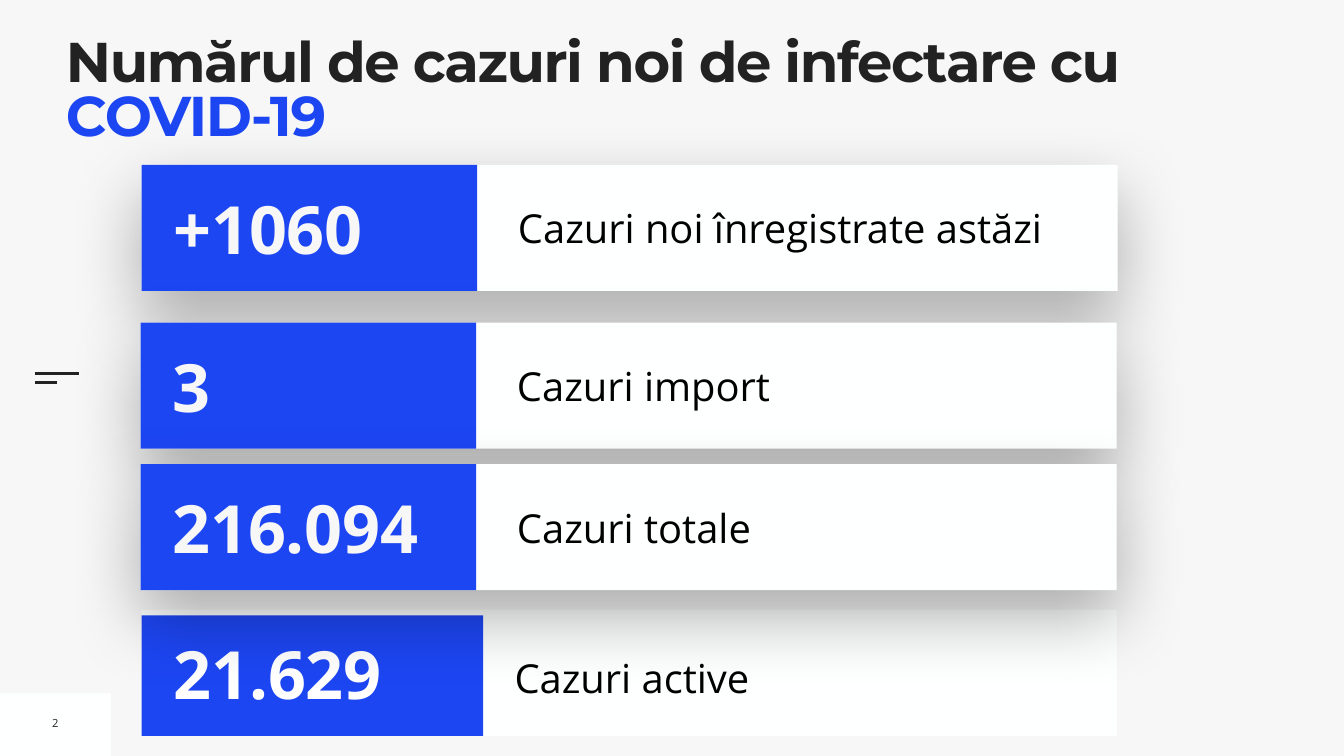
import pptx
import pptx.dml.color
import pptx.enum.shapes
import pptx.enum.text
import pptx.oxml
import pptx.oxml.ns
import pptx.util
from dataclasses import dataclass
from lxml import etree

Inches = pptx.util.Inches
Anchor = pptx.enum.text.MSO_ANCHOR
Align = pptx.enum.text.PP_ALIGN


@dataclass(frozen=True)
class Theme:
    background: str = "F7F7F7"
    panel: str = "FEFFFF"
    accent: str = "1D46F3"
    dark: str = "222222"
    black: str = "000000"
    white: str = "FFFFFF"
    heading_font: str = "Montserrat"
    body_font: str = "Open Sans"
    title_size: int = 80
    number_size: int = 95
    label_size: int = 57
    page_size: int = 16


theme = Theme()
rgb = pptx.dml.color.RGBColor.from_string


def add_rectangle(shapes, left, top, width, height, color):
    shape = shapes.add_shape(
        pptx.enum.shapes.MSO_SHAPE.RECTANGLE,
        Inches(left), Inches(top), Inches(width), Inches(height))
    shape.shadow.inherit = False
    shape.fill.solid()
    shape.fill.fore_color.rgb = rgb(color)
    shape.line.fill.background()
    return shape


def add_text(shapes, box, runs, size, font=theme.body_font, bold=False,
             inset=0.1, anchor=Anchor.MIDDLE, wrap=True):
    """Add a one-paragraph text box from (text, color) runs; return its paragraph."""
    frame = shapes.add_textbox(*map(Inches, box)).text_frame
    frame.word_wrap = wrap
    frame.vertical_anchor = anchor
    frame.margin_left = frame.margin_right = Inches(inset)
    frame.margin_top = frame.margin_bottom = Inches(inset)
    paragraph = frame.paragraphs[0]
    for text, color in runs:
        run = paragraph.add_run()
        run.text = text
        run.font.name = font
        run.font.size = pptx.util.Pt(size)
        run.font.bold = bold
        run.font.color.rgb = rgb(color)
    return paragraph


presentation = pptx.Presentation()
presentation.slide_width = Inches(26.67)
presentation.slide_height = Inches(15)
slide = presentation.slides.add_slide(presentation.slide_layouts[6])
slide.background.fill.solid()
slide.background.fill.fore_color.rgb = rgb(theme.background)

# Page number corner and side mark
add_rectangle(slide.shapes, 0, 13.76, 2.2, 1.24, theme.panel)
for end, y in [(1.57, 7.41), (1.13, 7.59)]:
    connector = slide.shapes.add_connector(
        pptx.enum.shapes.MSO_CONNECTOR.STRAIGHT,
        Inches(0.69), Inches(y), Inches(end), Inches(y))
    connector.line.color.rgb = rgb(theme.dark)
    connector.line.width = pptx.util.Pt(3)
    etree.SubElement(connector._element.spPr, pptx.oxml.ns.qn("a:effectLst"))
page_number = add_text(slide.shapes, (0.93, 14.09, 0.34, 0.51),
                       [("2", theme.dark)], theme.page_size, wrap=False)
page_number.alignment = Align.CENTER

# Title
title = add_text(
    slide.shapes, (1.31, 0.78, 23.94, 1.58),
    [("Numărul de cazuri noi de infectare cu ", theme.dark),
     ("COVID-19", theme.accent)],
    theme.title_size, theme.heading_font, bold=True, inset=0, anchor=Anchor.TOP)
title.line_spacing = 0.8
for run in title.runs:
    run.font._element.set("spc", "-200")

# Active cases: the lowest row, behind the shadows of the others
active = slide.shapes.add_group_shape().shapes
add_rectangle(active, 2.81, 12.1, 19.35, 2.5, theme.panel)
active_label = add_text(active, (10.21, 12.68, 11.58, 1.25),
                        [("Cazuri active", theme.black)], theme.label_size, inset=0)
active_label.line_spacing = 1.3
active_label.space_before = pptx.util.Pt(20)
add_rectangle(active, 2.81, 12.21, 6.78, 2.39, theme.accent)
add_text(active, (3.34, 12.45, 6.03, 1.8), [("21.629", theme.white)],
         theme.number_size, bold=True)

# Rows with a soft shadow
shadow_xml = (
    f'<a:outerShdw {pptx.oxml.ns.nsdecls("a")} blurRad="{pptx.util.Pt(100)}" '
    f'dist="{pptx.util.Pt(40)}" dir="5400000" rotWithShape="0">'
    f'<a:srgbClr val="{theme.black}"><a:alpha val="30000"/></a:srgbClr></a:outerShdw>')
rows = [
    (2.81, 3.27, "+1060", "Cazuri noi înregistrate astăzi"),
    (2.79, 6.4, "3", "Cazuri import"),
    (2.79, 9.21, "216.094", "Cazuri totale"),
]
for left, top, number, label in rows:
    row = slide.shapes.add_group_shape().shapes
    panel = add_rectangle(row, left, top, 19.37, 2.5, theme.panel)
    effects = panel._element.spPr.find(pptx.oxml.ns.qn("a:effectLst"))
    effects.append(pptx.oxml.parse_xml(shadow_xml))
    add_text(row, (left + 7.37, top + 0.67, 11.76, 1.16),
             [(label, theme.black)], theme.label_size)
    add_rectangle(row, left, top, 6.66, 2.5, theme.accent)
    add_text(row, (left + 0.53, top + 0.35, 6.03, 1.8),
             [(number, theme.background)], theme.number_size, bold=True)

presentation.save("out.pptx")
